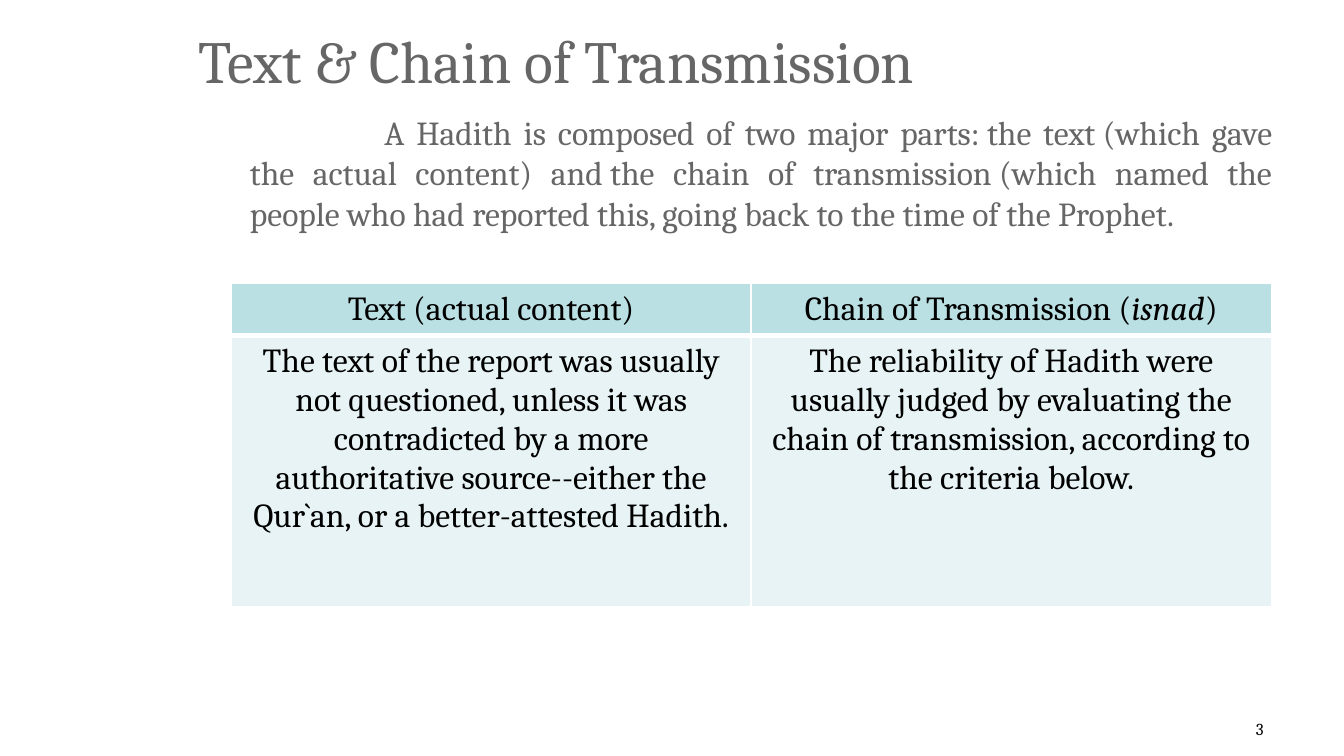
from dataclasses import dataclass

from lxml.etree import SubElement
from pptx import Presentation
from pptx.dml.color import RGBColor
from pptx.enum.text import MSO_ANCHOR as Anchor, MSO_AUTO_SIZE as AutoSize, PP_ALIGN as Align
from pptx.oxml.ns import qn
from pptx.util import Inches, Pt

FONT = "Cambria"
BLACK = RGBColor(0x00, 0x00, 0x00)
GRAY = RGBColor(0x66, 0x66, 0x66)
WHITE = RGBColor(0xFF, 0xFF, 0xFF)
HEADER_TEAL = RGBColor(0xBB, 0xE0, 0xE3)
BODY_TEAL = RGBColor(0xE7, 0xF3, 0xF4)
WIDTH = Inches(10)
HEIGHT = WIDTH * 9 // 16
HARD_SPACE = chr(160)


@dataclass(frozen=True)
class Area:
    left: float
    top: float
    width: float
    height: float

    def lengths(self) -> tuple[int, int, int, int]:
        return (round(self.left * WIDTH), round(self.top * HEIGHT),
                round(self.width * WIDTH), round(self.height * HEIGHT))


@dataclass(frozen=True)
class Piece:
    text: str
    italic: bool = False


@dataclass(frozen=True)
class TableRow:
    height: float
    fill: RGBColor
    bottom_line: float
    cells: tuple[tuple[Piece, ...], ...]


TITLE_AREA = Area(0.138, 0.028, 0.819, 0.103)
BODY_AREA = Area(0.138, 0.139, 0.819, 0.183)
TABLE_AREA = Area(0.172, 0.375, 0.774, 0.43)
NUMBER_AREA = Area(0.717, 0.942, 0.233, 0.039)

INTRODUCTION = HARD_SPACE.join((
    "A Hadith is composed of two major parts:",
    "the text",
    "(which gave the actual content) and",
    "the chain of transmission",
    "(which named the people who had reported this, going back to the time "
    "of the Prophet.",
))
ROWS = (
    TableRow(0.32, HEADER_TEAL, 3, (
        (Piece("Text (actual content)"),),
        (Piece("Chain of Transmission ("), Piece("isnad", True), Piece(")")),
    )),
    TableRow(2.02, BODY_TEAL, 1, (
        (Piece("The text of the report was usually not questioned, unless it was "
               "contradicted by a more authoritative source--either the Qur`an, "
               "or a better-attested Hadith."),),
        (Piece("The reliability of Hadith were usually judged by evaluating the "
               "chain of transmission, according to the criteria below."),),
    )),
)


def style_runs(para, size: float, color: RGBColor) -> None:
    for span in para.runs:
        span.font.name = FONT
        span.font.size = Pt(size)
        span.font.color.rgb = color


def write_box(box, area: Area, text: str, size: float, color: RGBColor,
              align: Align, anchor: Anchor):
    box.left, box.top, box.width, box.height = area.lengths()
    frame = box.text_frame
    frame.text = text
    frame.word_wrap = True
    frame.auto_size = AutoSize.NONE
    frame.vertical_anchor = anchor
    para = frame.paragraphs[0]
    para.alignment = align
    style_runs(para, size, color)
    return para


def indent_first_line(para, margin: float, indent: float) -> None:
    properties = para._p.get_or_add_pPr()
    properties.set("marL", str(Inches(margin)))
    properties.set("indent", str(Inches(indent)))
    SubElement(properties, qn("a:buNone"))


def draw_borders(cell, top_line: float, bottom_line: float) -> None:
    properties = cell._tc.get_or_add_tcPr()
    lines = {"a:lnL": 1, "a:lnR": 1, "a:lnT": top_line, "a:lnB": bottom_line}
    for tag, width in lines.items():
        line = SubElement(properties, qn(tag), w=str(Pt(width)))
        fill = SubElement(line, qn("a:solidFill"))
        SubElement(fill, qn("a:srgbClr"), val=str(WHITE))


def write_cell(cell, pieces: tuple[Piece, ...]) -> None:
    para = cell.text_frame.paragraphs[0]
    para.alignment = Align.CENTER
    for piece in pieces:
        span = para.add_run()
        span.text = piece.text
        span.font.italic = piece.italic
    style_runs(para, 18, BLACK)


def draw_table(page, area: Area, rows: tuple[TableRow, ...]) -> None:
    holder = page.shapes.add_table(len(rows), len(rows[0].cells), *area.lengths())
    table = holder.table
    table.first_row = False
    table.horz_banding = False
    top_line = 1
    for index, row in enumerate(rows):
        table.rows[index].height = Inches(row.height)
        for column, pieces in enumerate(row.cells):
            cell = table.cell(index, column)
            write_cell(cell, pieces)
            draw_borders(cell, top_line, row.bottom_line)
            cell.fill.solid()
            cell.fill.fore_color.rgb = row.fill
        top_line = row.bottom_line
    holder.height = area.lengths()[3]


def main() -> None:
    deck = Presentation()
    deck.slide_width, deck.slide_height = WIDTH, HEIGHT
    page = deck.slides.add_slide(deck.slide_layouts[1])
    title, body = page.placeholders
    write_box(title, TITLE_AREA, "Text & Chain of Transmission", 32, GRAY,
              Align.LEFT, Anchor.MIDDLE)
    introduction = write_box(body, BODY_AREA, INTRODUCTION, 18, GRAY,
                             Align.JUSTIFY, Anchor.TOP)
    introduction.space_before = Pt(0)
    indent_first_line(introduction, 0.38, 1)
    draw_table(page, TABLE_AREA, ROWS)
    number = page.shapes.add_textbox(*NUMBER_AREA.lengths())
    write_box(number, NUMBER_AREA, "3", 9, BLACK, Align.RIGHT, Anchor.TOP)
    deck.save("out.pptx")


if __name__ == "__main__":
    main()
